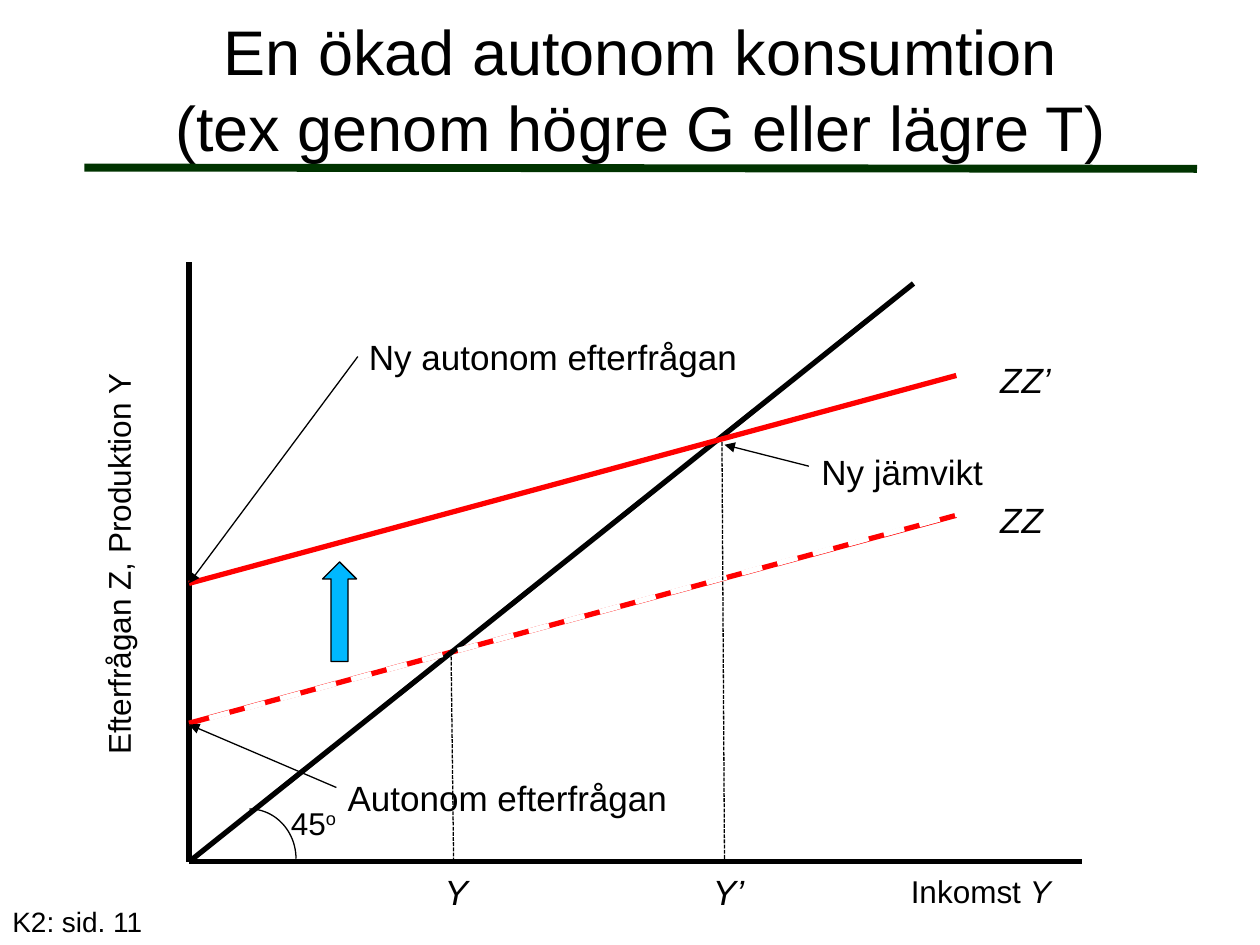
from lxml import etree
from pptx import Presentation
from pptx import util as u
from pptx.dml.color import RGBColor
from pptx.enum import dml, shapes, text
from pptx.oxml.ns import qn

COLORS = {
    "black": "000000",
    "white": "FFFFFF",
    "demand": "FF0000",
    "shift": "00B8FF",
    "rule": "003300",
}
ORIGIN = (1.5, 6.84)
AXIS_TOP = 2.08
INCOME_Y = 6.83


def color(name):
    return RGBColor.from_string(COLORS[name])


def add_line(slide, start, end, name="black", width=0.75, dash=None, arrow=False):
    points = [u.Inches(value) for value in (*start, *end)]
    connector = slide.shapes.add_connector(shapes.MSO_CONNECTOR.STRAIGHT, *points)
    connector.line.color.rgb = color(name)
    connector.line.width = u.Pt(width)
    if dash:
        connector.line.dash_style = dash
    if arrow:
        line = connector.line._get_or_add_ln()
        etree.SubElement(line, qn("a:tailEnd"), type="triangle")
    etree.SubElement(connector._element.spPr, qn("a:effectLst"))


def format_run(run, size, italic=False, raised=False):
    run.font.name = "Arial"
    run.font.size = u.Pt(size)
    run.font.color.rgb = color("black")
    if italic:
        run.font.italic = True
    if raised:
        run._r.get_or_add_rPr().set("baseline", "30000")


def add_label(slide, box, content, size=20, italic=False, rotation=0, wrap=False):
    shape = slide.shapes.add_textbox(*[u.Inches(value) for value in box])
    shape.rotation = rotation
    frame = shape.text_frame
    frame.word_wrap = wrap
    frame.auto_size = text.MSO_AUTO_SIZE.NONE if wrap else text.MSO_AUTO_SIZE.SHAPE_TO_FIT_TEXT
    frame.text = content
    paragraph = frame.paragraphs[0]
    format_run(paragraph.runs[0], size, italic)
    return paragraph


def add_ending(paragraph, content, size, italic=False, raised=False):
    run = paragraph.add_run()
    run.text = content
    format_run(run, size, italic, raised)


def add_outline(slide, kind, box, fill=None):
    shape = slide.shapes.add_shape(kind, *[u.Inches(value) for value in box])
    shape.shadow.inherit = False
    if fill:
        shape.fill.solid()
        shape.fill.fore_color.rgb = color(fill)
    else:
        shape.fill.background()
    shape.line.color.rgb = color("black")
    shape.line.width = u.Pt(0.75)
    return shape


def add_title(slide, content):
    title = slide.shapes.title
    title.left, title.top, title.width, title.height = [
        u.Inches(value) for value in (0.67, 0.08, 8.83, 1.24)
    ]
    frame = title.text_frame
    frame.text = content
    frame.word_wrap = True
    frame.auto_size = text.MSO_AUTO_SIZE.NONE
    frame.vertical_anchor = text.MSO_ANCHOR.MIDDLE
    paragraph = frame.paragraphs[0]
    paragraph.alignment = text.PP_ALIGN.CENTER
    for run in paragraph.runs:
        format_run(run, 36)


def add_axes(slide):
    add_line(slide, ORIGIN, (8.59, 6.84), width=3)
    add_line(slide, ORIGIN, (ORIGIN[0], AXIS_TOP), width=3)
    income = add_label(slide, (7.13, 6.87, 1.32, 0.41), "Inkomst ", 18)
    add_ending(income, "Y", 18, italic=True)
    add_label(slide, (-0.68, 4.26, 3.25, 0.41), "Efterfrågan Z, Produktion Y", 18, rotation=270)


def add_curves(slide):
    add_line(slide, (1.5, 5.74), (7.59, 4.09), "demand", 3)
    add_line(slide, ORIGIN, (7.25, 2.25), width=3)
    add_line(slide, (1.5, 4.63), (7.59, 2.98), "demand", 3)
    add_line(slide, (1.66, 5.7), (7.75, 4.04), "white", 3, dml.MSO_LINE.DASH)
    add_label(slide, (7.84, 3.91, 0.54, 0.44), "ZZ", italic=True)
    add_label(slide, (7.84, 2.8, 0.6, 0.44), "ZZ’", italic=True)


def add_equilibria(slide):
    for x, y, content, left, width in (
        (3.58, 5.17, "Y", 3.43, 0.39),
        (5.73, 3.51, "Y’", 5.56, 0.45),
    ):
        add_line(slide, (x, y), (x + 0.02, INCOME_Y), dash=dml.MSO_LINE.SQUARE_DOT)
        add_label(slide, (left, 6.86, width, 0.44), content, italic=True)


def add_callouts(slide):
    for content, box, start, end in (
        ("Autonom efterfrågan", (2.66, 6.11, 2.75, 0.44), (2.67, 6.25), (1.5, 5.75)),
        ("Ny jämvikt", (6.42, 3.53, 1.49, 0.44), (6.42, 3.7), (5.75, 3.53)),
        ("Ny autonom efterfrågan", (2.83, 2.61, 3.14, 0.44), (2.84, 2.83), (1.5, 4.63)),
    ):
        add_line(slide, start, end, arrow=True)
        add_label(slide, box, content)


def add_angle(slide):
    add_outline(slide, shapes.MSO_SHAPE.ARC, (1.61, 6.42, 0.74, 0.79))
    angle = add_label(slide, (2.21, 6.33, 0.58, 0.4), "45", 18)
    add_ending(angle, "o", 18, raised=True)


def main():
    presentation = Presentation()
    presentation.slide_width = u.Inches(10)
    presentation.slide_height = u.Inches(7.5)
    slide = presentation.slides.add_slide(presentation.slide_layouts[5])
    add_line(slide, (0.67, 1.33), (9.5, 1.34), "rule", 4.5)
    add_title(slide, "En ökad autonom konsumtion\v(tex genom högre G eller lägre T)")
    add_axes(slide)
    add_curves(slide)
    add_equilibria(slide)
    add_callouts(slide)
    arrow = add_outline(slide, shapes.MSO_SHAPE.DOWN_ARROW, (2.56, 4.46, 0.27, 0.79), "shift")
    arrow.rotation = 180
    add_angle(slide)
    add_label(slide, (0, 7.13, 2.08, 0.37), "K2: sid. 11", 16, wrap=True)
    presentation.save("out.pptx")


if __name__ == "__main__":
    main()
